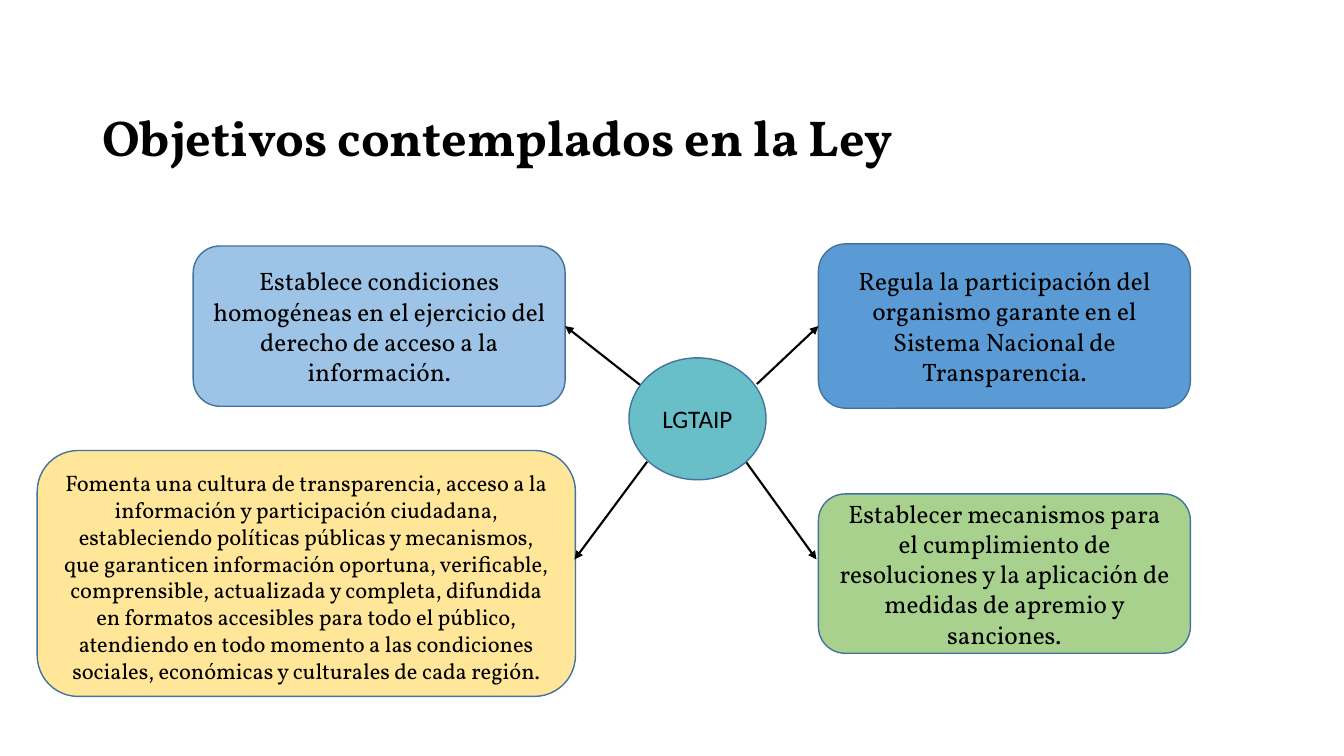
from lxml.etree import SubElement
from pptx import Presentation
from pptx.dml.color import RGBColor
from pptx.enum.shapes import MSO_CONNECTOR, MSO_SHAPE
from pptx.enum.text import MSO_ANCHOR, PP_ALIGN
from pptx.oxml.ns import qn
from pptx.util import Pt

COLORS = {
    "text": "000000", "outline": "43739E", "hub": "68BFC8",
    "light_blue": "9DC3E6", "blue": "5B9BD5",
    "yellow": "FFE699", "green": "A9D18E",
}
SERIF, SANS = "Vollkorn", "Calibri"
LEFT, RIGHT = 1, 3  # connection sites of a rectangle

HUB = (449.3, 255.6, 97.9, 87.1)
# box, fill, text size, top inset, text, arrow start inside the hub, arrow end
# (a side to join, or the point where the arrow stops)
GOALS = [
    ((138, 175.7, 265.7, 114.5), "light_blue", 18, 3.6,
     "Establece condiciones homogéneas en el ejercicio del derecho de acceso "
     "a la información.", (8, 19.4), RIGHT),
    ((584.6, 174.2, 265.7, 117.4), "blue", 18, 3.6,
     "Regula la participación del organismo garante en el Sistema Nacional de "
     "Transparencia.", (91.4, 18.7), LEFT),
    ((26.6, 321.8, 384.5, 175.7), "yellow", 16, 8,
     "Fomenta una cultura de transparencia, acceso a la información y "
     "participación ciudadana, estableciendo políticas públicas y mecanismos, "
     "que garanticen información oportuna, verificable, comprensible, "
     "actualizada y completa, difundida en formatos accesibles para todo el "
     "público, atendiendo en todo momento a las condiciones sociales, "
     "económicas y culturales de cada región.", (13, 74.2), (410.4, 399.6)),
    ((584.6, 352.8, 265.7, 113.8), "green", 18, 3.6,
     "Establecer mecanismos para el cumplimiento de resoluciones y la "
     "aplicación de medidas de apremio y sanciones.", (83.5, 74.2), (583.2, 399.6)),
]


def color(name):
    return RGBColor.from_string(COLORS[name])


def write(sp, text, align, top=3.6, spacing=None, **font):
    tf = sp.text_frame
    frame = {"word_wrap": True, "vertical_anchor": MSO_ANCHOR.MIDDLE,
             "margin_top": Pt(top)}
    for key, value in frame.items():
        setattr(tf, key, value)
    p = tf.paragraphs[0]
    p.alignment = align
    p.line_spacing = spacing
    r = p.add_run()
    r.text = text
    for key, value in font.items():
        setattr(r.font, key, value)
    r.font.color.rgb = color("text")


def add_title(s, box, text):
    sp = s.shapes.add_textbox(*map(Pt, box))
    write(sp, text, PP_ALIGN.LEFT, spacing=0.9, name=SERIF, size=Pt(36), bold=True)


def add_node(s, kind, box, fill, text, top=3.6, **font):
    sp = s.shapes.add_shape(kind, *map(Pt, box))
    sp.shadow.inherit = False
    sp.fill.solid()
    sp.fill.fore_color.rgb = color(fill)
    sp.line.color.rgb = color("outline")
    sp.line.width = Pt(1)
    write(sp, text, PP_ALIGN.CENTER, top, **font)
    return sp


def add_arrow(s, start, end, goal):
    joined = end in (LEFT, RIGHT)
    stop = start if joined else end
    cx = s.shapes.add_connector(MSO_CONNECTOR.STRAIGHT, *map(Pt, (*start, *stop)))
    if joined:
        cx.end_connect(goal, end)
    cx.line.color.rgb = color("text")
    cx.line.width = Pt(1.5)
    SubElement(cx.line._get_or_add_ln(), qn("a:tailEnd"), type="triangle")
    SubElement(cx._element.spPr, qn("a:effectLst"))


def add_diagram(s, hub, goals):
    x, y = hub[:2]
    # Goal boxes with their arrows
    for box, fill, size, top, text, (dx, dy), end in goals:
        goal = add_node(s, MSO_SHAPE.ROUNDED_RECTANGLE, box, fill, text, top,
                        name=SERIF, size=Pt(size))
        add_arrow(s, (x + dx, y + dy), end, goal)
    # Central hub
    add_node(s, MSO_SHAPE.OVAL, hub, "hub", "LGTAIP", name=SANS, size=Pt(18))


def main():
    prs = Presentation()
    prs.slide_width, prs.slide_height = Pt(960), Pt(540)
    s = prs.slides.add_slide(prs.slide_layouts[6])
    add_title(s, (66, 48, 828, 104.4), "Objetivos contemplados en la Ley")
    add_diagram(s, HUB, GOALS)
    prs.save("out.pptx")


if __name__ == "__main__":
    main()
